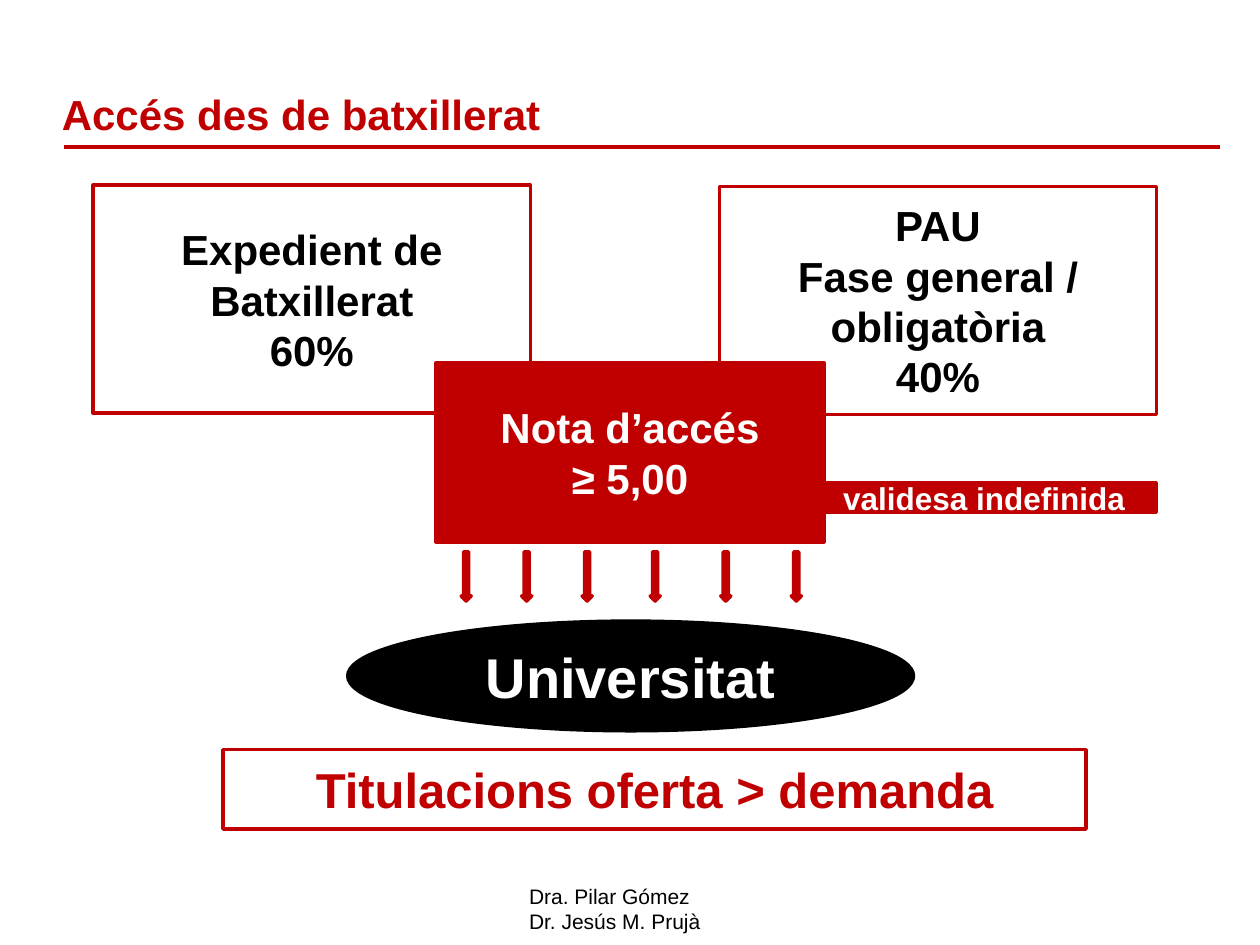
from dataclasses import dataclass

from lxml import etree
from pptx import Presentation
from pptx.dml.color import RGBColor
from pptx.enum.shapes import MSO_CONNECTOR, MSO_SHAPE
from pptx.enum.text import MSO_ANCHOR, PP_ALIGN
from pptx.oxml.ns import qn
from pptx.util import Inches, Pt

RECTANGLE, OVAL, DOWN_ARROW = MSO_SHAPE.RECTANGLE, MSO_SHAPE.OVAL, MSO_SHAPE.DOWN_ARROW
STRAIGHT = MSO_CONNECTOR.STRAIGHT
LEFT, CENTER = PP_ALIGN.LEFT, PP_ALIGN.CENTER
MIDDLE = MSO_ANCHOR.MIDDLE
TITLE_ONLY = 5
WIDTH, HEIGHT = Inches(10), Inches(7.5)
COLUMN, ROW = WIDTH / 100, HEIGHT / 75


@dataclass(frozen=True)
class Theme:
    """Colours, font and type sizes of the slide."""

    red: RGBColor = RGBColor(0xC0, 0x00, 0x00)
    black: RGBColor = RGBColor(0x00, 0x00, 0x00)
    white: RGBColor = RGBColor(0xFF, 0xFF, 0xFF)
    font: str = "Arial"
    credit: int = 12
    note: int = 18
    body: int = 24
    offer: int = 28
    goal: int = 32
    outline: float = 2
    rule: float = 2.25


THEME = Theme()


@dataclass(frozen=True)
class Box:
    """A rectangle measured in grid columns and rows."""

    left: float
    top: float
    width: float
    height: float

    def inner(self, left, top, width, height):
        """Return a box placed relative to this one."""
        return Box(self.left + left, self.top + top, width, height)

    def place(self):
        """Return left, top, width and height as slide lengths."""
        return (int(self.left * COLUMN), int(self.top * ROW),
                int(self.width * COLUMN), int(self.height * ROW))


def write(frame, lines, size, colour, bold=True, align=CENTER):
    """Fill a text frame with one formatted paragraph per line."""
    frame.text = "\n".join(lines)
    for para in frame.paragraphs:
        para.alignment = align
        for span in para.runs:
            span.font.name = THEME.font
            span.font.size = Pt(size)
            span.font.bold = bold
            span.font.color.rgb = colour


def add_block(page, box, kind, fill, outline):
    """Add a filled, outlined shape without shadow."""
    shape = page.shapes.add_shape(kind, *box.place())
    shape.shadow.inherit = False
    shape.fill.solid()
    shape.fill.fore_color.rgb = fill
    shape.line.color.rgb = outline
    shape.line.width = Pt(THEME.outline)
    return shape


def add_label(page, box, lines, size, colour, fill, outline, kind=RECTANGLE):
    """Add a shape with bold centred text."""
    shape = add_block(page, box, kind, fill, outline)
    shape.text_frame.word_wrap = True
    shape.text_frame.vertical_anchor = MIDDLE
    write(shape.text_frame, lines, size, colour)
    return shape


def add_header(page, box):
    """Place the title and the rule beneath it."""
    left, top, width, height = box.inner(1.2, 5.4, 91.7, 0).place()
    rule = page.shapes.add_connector(STRAIGHT, left, top, left + width, top + height)
    rule.line.color.rgb = THEME.red
    rule.line.width = Pt(THEME.rule)
    etree.SubElement(rule.element.spPr, qn("a:effectLst"))
    title = page.shapes.title
    title.left, title.top, title.width, title.height = box.place()
    title.text_frame.vertical_anchor = MIDDLE
    write(title.text_frame, ["Accés des de batxillerat"], THEME.body, THEME.red, align=LEFT)


def add_scores(page, box):
    """Place the two weighted marks and the access mark they form."""
    marks = [
        ((0, 0), ["Expedient de", "Batxillerat", "60%"]),
        ((49.7, 0.1), ["PAU", "Fase general / obligatòria", "40%"]),
    ]
    for corner, lines in marks:
        add_label(page, box.inner(*corner, 34.7, 18.1), lines, THEME.body,
                  THEME.black, THEME.white, THEME.red)
    add_label(page, box.inner(27.2, 14.1, 30.8, 14.2), ["Nota d’accés", "≥ 5,00"],
              THEME.body, THEME.white, THEME.red, THEME.red)
    validity = add_label(page, box.inner(52.8, 23.6, 31.6, 2.4), ["validesa indefinida"],
                         THEME.note, THEME.white, THEME.red, THEME.red)
    validity.text_frame.margin_left = Inches(0.52)


def add_arrows(page, box):
    """Place the row of arrows leading down to the university."""
    for offset in (0, 4.8, 9.6, 15, 20.6, 26.2):
        add_block(page, box.inner(offset, 0, 0.8, box.height), DOWN_ARROW, THEME.red, THEME.red)


def add_destination(page, box):
    """Place the university and the note on degrees on offer."""
    add_label(page, box.inner(9.9, 0, 44.9, 8.7), ["Universitat"], THEME.goal,
              THEME.white, THEME.black, THEME.black, OVAL)
    add_label(page, box.inner(0, 10.2, box.width, 6.3), ["Titulacions oferta > demanda"],
              THEME.offer, THEME.red, THEME.white, THEME.red)


def add_credits(page, box):
    """Place the names of the speakers."""
    credit = page.shapes.add_textbox(*box.place())
    credit.text_frame.word_wrap = False
    write(credit.text_frame, ["Dra. Pilar Gómez", "Dr. Jesús M. Prujà"], THEME.credit,
          THEME.black, bold=False, align=LEFT)


def main():
    """Build and save the slide."""
    deck = Presentation()
    deck.slide_width, deck.slide_height = WIDTH, HEIGHT
    page = deck.slides.add_slide(deck.slide_layouts[TITLE_ONLY])
    add_header(page, Box(3.9, 6.3, 93.7, 5.5))
    add_scores(page, Box(7.4, 14.7, 84.4, 28.3))
    add_arrows(page, Box(36.6, 43.8, 27, 3.9))
    add_destination(page, Box(17.7, 49.3, 68.5, 16.5))
    add_credits(page, Box(41, 69.6, 15.8, 5))
    deck.save("out.pptx")


if __name__ == "__main__":
    main()
